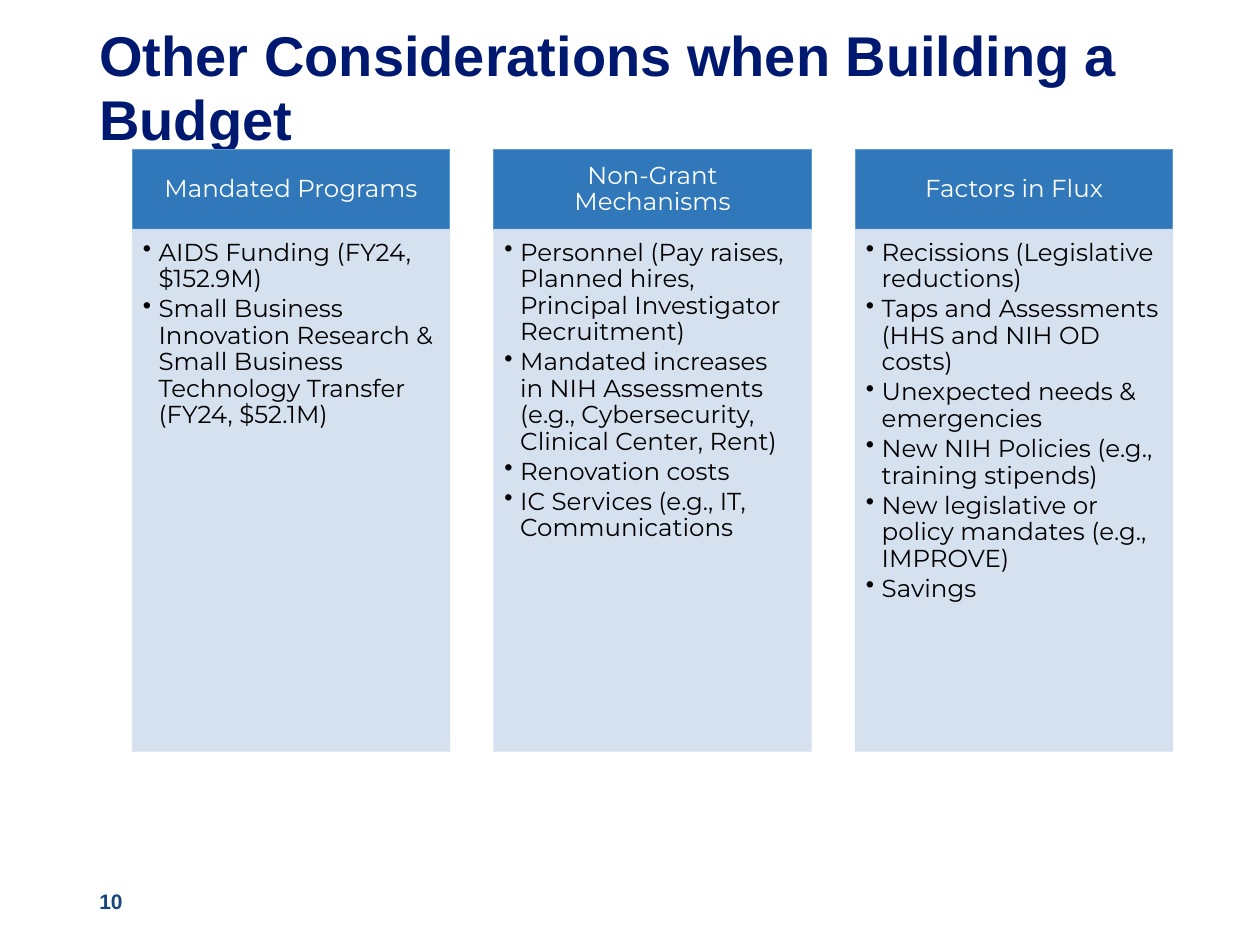
from lxml.etree import SubElement
from pptx import Presentation
from pptx.dml.color import RGBColor
from pptx.enum.shapes import MSO_SHAPE
from pptx.enum.text import MSO_ANCHOR, PP_ALIGN
from pptx.oxml.ns import qn
from pptx.util import Pt

NAVY = RGBColor(0x00, 0x19, 0x70)
SLATE = RGBColor(0x17, 0x46, 0x7D)
BLUE = RGBColor(0x30, 0x78, 0xBA)
EDGE = RGBColor(0x5B, 0x9B, 0xD5)
PALE = RGBColor(0xD2, 0xDE, 0xEF)
WHITE = RGBColor(0xFF, 0xFF, 0xFF)
BLACK = RGBColor(0x00, 0x00, 0x00)

COLUMNS = {
    "Mandated Programs": [
        "AIDS Funding (FY24, $152.9M)",
        "Small Business Innovation Research & Small Business Technology Transfer (FY24, $52.1M)",
    ],
    "Non-Grant Mechanisms": [
        "Personnel (Pay raises, Planned hires, Principal Investigator Recruitment)",
        "Mandated increases in NIH Assessments (e.g., Cybersecurity, Clinical Center, Rent)",
        "Renovation costs",
        "IC Services (e.g., IT, Communications",
    ],
    "Factors in Flux": [
        "Recissions (Legislative reductions)",
        "Taps and Assessments (HHS and NIH OD costs)",
        "Unexpected needs & emergencies",
        "New NIH Policies (e.g., training stipends)",
        "New legislative or policy mandates (e.g., IMPROVE)",
        "Savings",
    ],
}
COLUMN_LEFT, COLUMN_WIDTH, COLUMN_STEP = 75.6, 181.4, 206.6
HEADER_TOP, HEADER_HEIGHT, BODY_HEIGHT = 85.4, 45.7, 298.2


def set_all(target, values):
    for name, value in values.items():
        setattr(target, name, value)


class BudgetSlide:
    HEADING = {"name": "Arial", "bold": True}
    COLUMN = {"name": "Montserrat", "size": Pt(14)}
    INDENT = Pt(9)

    def __init__(self, slide):
        self.slide = slide

    def fill_text(self, frame, lines, font, color, margins, anchor, paragraph_format, bullet=None):
        left, top, right, bottom = map(Pt, margins)
        set_all(frame, {
            "word_wrap": True, "vertical_anchor": anchor, "margin_left": left,
            "margin_top": top, "margin_right": right, "margin_bottom": bottom,
        })
        for index, line in enumerate(lines):
            paragraph = frame.paragraphs[0] if index == 0 else frame.add_paragraph()
            paragraph.text = line
            set_all(paragraph, paragraph_format)
            if bullet:
                self.add_bullet(paragraph, bullet)
            run_font = paragraph.runs[0].font
            set_all(run_font, font)
            run_font.color.rgb = color

    def add_bullet(self, paragraph, bullet):
        properties = paragraph._p.get_or_add_pPr()
        properties.set("marL", str(self.INDENT))
        properties.set("indent", str(-self.INDENT))
        SubElement(properties, qn("a:buChar"), char=bullet)

    def heading(self, text, box, size, color, anchor, spacing=1.0):
        area = self.slide.shapes.add_textbox(*map(Pt, box))
        self.fill_text(area.text_frame, [text], {**self.HEADING, "size": Pt(size)}, color,
                       (7.2, 3.6, 7.2, 3.6), anchor, {"line_spacing": spacing})

    def panel(self, box, fill, edge, opacity=None):
        """Add a bordered rectangle and return its text frame."""
        panel = self.slide.shapes.add_shape(MSO_SHAPE.RECTANGLE, *map(Pt, box))
        panel.shadow.inherit = False
        panel.line.width = Pt(0.5)
        for paint, color in ((panel.fill, fill), (panel.line.fill, edge)):
            paint.solid()
            paint.fore_color.rgb = color
        if opacity:
            for rgb in panel._element.spPr.iter(qn("a:srgbClr")):
                SubElement(rgb, qn("a:alpha"), val=str(opacity * 1000))
        return panel.text_frame

    def column(self, left, header, items):
        header_box = (left, HEADER_TOP, COLUMN_WIDTH, HEADER_HEIGHT)
        self.fill_text(self.panel(header_box, BLUE, EDGE), [header], self.COLUMN, WHITE,
                       (8, 4.5, 8, 4.5), MSO_ANCHOR.MIDDLE,
                       {"alignment": PP_ALIGN.CENTER, "line_spacing": 0.9})
        body_box = (left, HEADER_TOP + HEADER_HEIGHT, COLUMN_WIDTH, BODY_HEIGHT)
        self.fill_text(self.panel(body_box, PALE, PALE, opacity=90), items, self.COLUMN, BLACK,
                       (6, 6, 8, 9), MSO_ANCHOR.TOP,
                       {"alignment": PP_ALIGN.LEFT, "line_spacing": 0.9, "space_after": Pt(2.1)},
                       bullet="•")


def main():
    deck = Presentation()
    deck.slide_width, deck.slide_height = Pt(720), Pt(540)
    budget = BudgetSlide(deck.slides.add_slide(deck.slide_layouts[6]))
    budget.heading("Other Considerations when Building a Budget", (49.7, 10.8, 620.6, 65.5),
                   32, NAVY, MSO_ANCHOR.TOP, spacing=0.95)
    budget.heading("10", (49.7, 500.4, 216, 28.8), 12, SLATE, MSO_ANCHOR.MIDDLE)
    for index, (header, items) in enumerate(COLUMNS.items()):
        budget.column(COLUMN_LEFT + index * COLUMN_STEP, header, items)
    deck.save("out.pptx")


if __name__ == "__main__":
    main()
